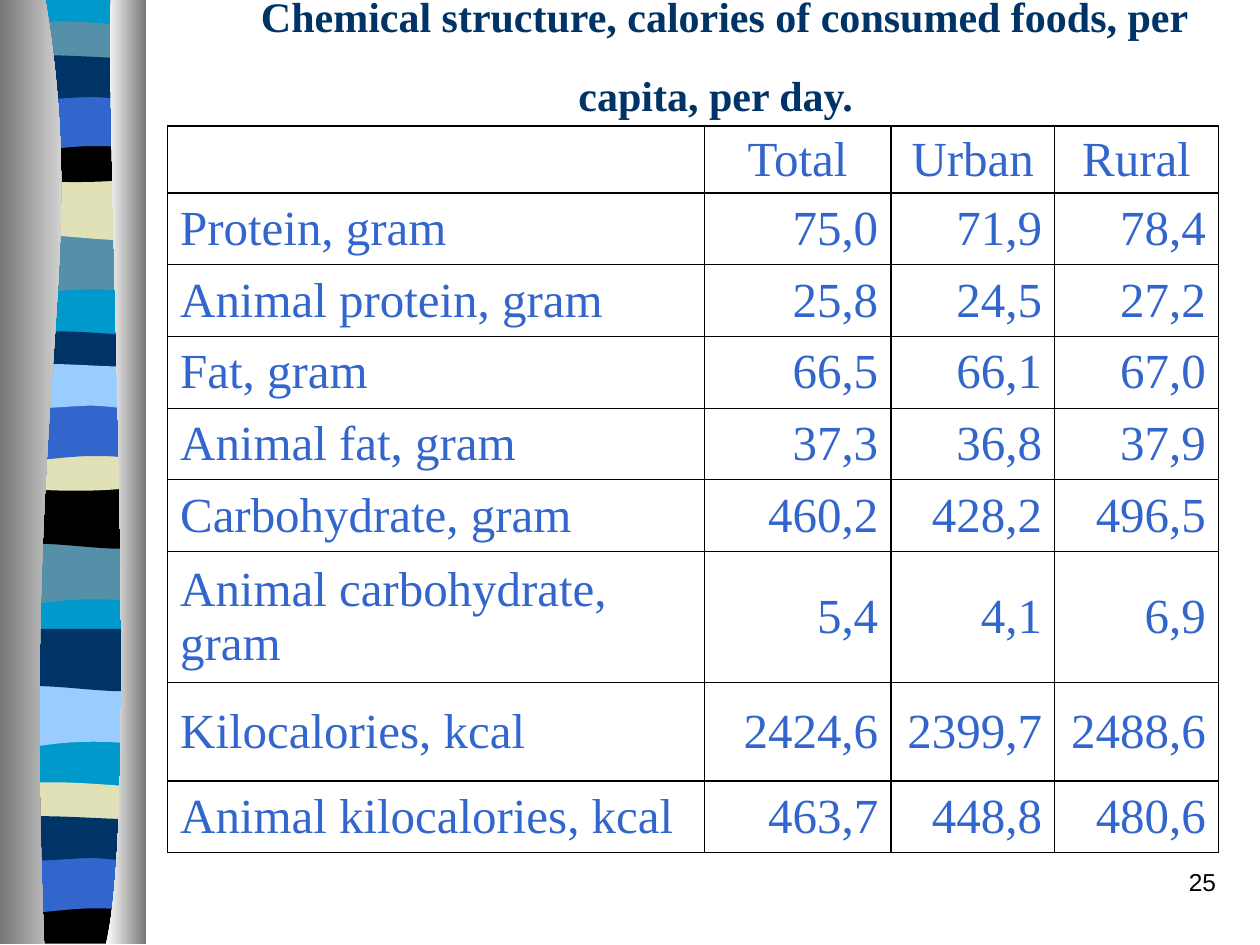
from dataclasses import dataclass

from lxml import etree
from pptx import Presentation
from pptx.dml.color import RGBColor as RGB
from pptx.enum.text import MSO_ANCHOR as Anchor, PP_ALIGN as Align
from pptx.oxml.ns import qn
from pptx.util import Inches, Pt


@dataclass(frozen=True)
class Theme:
    serif: str = "Times New Roman"
    sans: str = "Arial"
    title_size: int = 24
    title_gap_size: int = 40
    table_size: int = 28
    number_size: int = 14
    cyan: str = "0099CC"
    teal: str = "5490A8"
    sand: str = "E1E1B7"
    black: str = "000000"
    blue: str = "3366CC"
    navy: str = "003366"
    sky: str = "99CCFF"
    white: str = "FFFFFF"
    grey: str = "767676"


LEFT, RIGHT = 0.05, 1.14


def band(height, top=(), bottom=()):
    """Steps of a band outline: one point is a line, three points are a curve."""
    bottom = bottom or [[(LEFT, height)]]
    return [[(RIGHT, 0)], [(RIGHT, height)], *bottom, [(LEFT, 0)], *(top or [[(RIGHT, 0)]])]


def write_text(frame, text, size, color, font, bold=False, align=Align.LEFT):
    paragraph = frame.paragraphs[0]
    paragraph.alignment = align
    run = paragraph.add_run()
    run.text = text
    run.font.size, run.font.name, run.font.bold = Pt(size), font, bold
    run.font.color.rgb = RGB.from_string(color)


class SlideBuilder:
    def __init__(self, slide, theme):
        self.slide = slide
        self.theme = theme

    def outline(self, steps, color=None, gradient=None, top=0):
        points = [(Inches(x), Inches(y + top)) for step in steps for x, y in step]
        builder = self.slide.shapes.build_freeform(*points[0])
        builder.add_line_segments(points[1:], close=True)
        shape = builder.convert_to_shape()
        self.bend(shape, steps[1:])
        shape.shadow.inherit = False
        shape.line.fill.background()
        if gradient:
            shape.fill.gradient()
            shape.fill.gradient_angle = 0
            for stop, stop_color in zip(shape.fill.gradient_stops, gradient):
                stop.color.rgb = RGB.from_string(stop_color)
        else:
            shape.fill.solid()
            shape.fill.fore_color.rgb = RGB.from_string(color)

    def bend(self, shape, steps):
        """Join the three points of each curve step into one Bezier segment."""
        lines = iter(list(shape.element.iter(qn("a:lnTo"))))
        for step in steps:
            segment = next(lines)
            if len(step) == 3:
                segment.tag = qn("a:cubicBezTo")
                for line in (next(lines), next(lines)):
                    segment.append(line[0])
                    line.getparent().remove(line)

    def text_box(self, left, top, width, height, anchor=Anchor.TOP):
        box = self.slide.shapes.add_textbox(*map(Inches, (left, top, width, height)))
        box.text_frame.word_wrap = True
        box.text_frame.vertical_anchor = anchor
        return box.text_frame

    def border(self, cell, widths):
        properties = cell._tc.get_or_add_tcPr()
        for index, (side, width) in enumerate(widths.items()):
            line = etree.Element(qn(f"a:ln{side}"), w=str(Pt(width)))
            fill = etree.SubElement(line, qn("a:solidFill"))
            etree.SubElement(fill, qn("a:srgbClr"), val=self.theme.black)
            properties.insert(index, line)

    def table(self, left, top, columns, heights, rows):
        frame = self.slide.shapes.add_table(
            len(rows), len(columns), Inches(left), Inches(top),
            Inches(sum(columns)), Inches(sum(heights)))
        table = frame.table
        table.first_row = table.horz_banding = False
        for column, width in zip(table.columns, columns):
            column.width = Inches(width)
        for row, height in zip(table.rows, heights):
            row.height = Inches(height)
        for r, values in enumerate(rows):
            for c, value in enumerate(values):
                cell = table.cell(r, c)
                cell.fill.background()
                cell.vertical_anchor = Anchor.MIDDLE
                if r == 0:
                    cell.margin_top = cell.margin_bottom = Inches(0.02)
                self.border(cell, {"L": 1, "R": 1, "T": 1 if r < 2 else 0.75,
                                   "B": 1 if r in (0, len(rows) - 1) else 0.75})
                if value:
                    align = Align.CENTER if r == 0 else Align.RIGHT if c else Align.LEFT
                    write_text(cell.text_frame, value, size=self.theme.table_size,
                               color=self.theme.blue, font=self.theme.serif, align=align)


def draw_ribbon(builder):
    theme = builder.theme
    # Band outlines, measured from the top right corner of each band
    sag = band(0.47, bottom=[[(0.39, 0.39), (0.24, 0.55), (LEFT, 0.47)]])
    ripple = band(0.47, bottom=[[(0.96, 0.55), (0.39, 0.41), (LEFT, 0.47)]])
    crest = band(0.24, top=[[(0.12, -0.05), (0.29, -0.04), (0.47, -0.04)],
                            [(0.65, -0.04), (1, -0.01), (RIGHT, 0)]],
                 bottom=[[(0.96, 0.29), (0.24, 0.29), (LEFT, 0.24)]])
    bowl_top = [[(0.72, 0.05), (0.91, 0), (RIGHT, 0)]]
    bowl = band(0.32, top=bowl_top, bottom=[[(0.96, 0.38), (0.24, 0.38), (LEFT, 0.32)]])
    foot = band(0.37, top=bowl_top)
    arch = band(0.47, bottom=[[(0.97, 0.42), (0.9, 0.42), (0.72, 0.42)],
                              [(0.54, 0.42), (0.22, 0.47), (LEFT, 0.47)]])
    swell = band(0.31, top=[[(0.21, -0.05), (0.79, 0), (0.97, 0)],
                            [(1.15, 0), (1.1, 0), (RIGHT, 0)]],
                 bottom=[[(1.07, 0.36), (0.9, 0.31), (0.72, 0.31)],
                         [(0.54, 0.31), (0.17, 0.36), (LEFT, 0.31)]])

    # Bands from back to front
    bands = [
        (band(7.47), 0, theme.cyan),
        (sag, 1.85, theme.teal), (ripple, 1.41, theme.sand), (crest, 0.21, theme.teal),
        (bowl, 1.08, theme.black), (arch, 0.74, theme.blue), (swell, 0.46, theme.navy),
        (sag, 4.31, theme.teal), (ripple, 3.86, theme.black), (crest, 2.67, theme.navy),
        (bowl, 3.53, theme.sand), (arch, 3.2, theme.blue), (swell, 2.91, theme.sky),
        (sag, 5.44, theme.sky), (ripple, 4.99, theme.navy), (crest, 6.25, theme.sand),
        (foot, 7.12, theme.black), (arch, 6.79, theme.blue), (swell, 6.5, theme.navy),
    ]
    for steps, top, color in bands:
        builder.outline(steps, color, top=top)

    # Shaded columns on both sides
    builder.outline([[(0.36, 0)], [(0.72, 2.16), (0.17, 2.96), (0.35, 7.49)],
                     [(0, 7.49)], [(0, 0)], [(0.36, 0)]],
                    gradient=(theme.grey, theme.white))
    builder.outline([[(0.88, 0)], [(0.84, 1.25), (1.11, 6.46), (0.84, 7.49)],
                     [(1.16, 7.49)], [(1.16, 0)], [(0.88, 0)]],
                    gradient=(theme.white, theme.grey))


def main():
    presentation = Presentation()
    presentation.slide_width, presentation.slide_height = Inches(10), Inches(7.5)
    slide = presentation.slides.add_slide(presentation.slide_layouts[6])
    theme = Theme()
    builder = SlideBuilder(slide, theme)
    draw_ribbon(builder)

    # Page number
    number = builder.text_box(7.67, 6.83, 2.08, 0.5)
    write_text(number, "25", size=theme.number_size, color=theme.black,
               font=theme.sans, align=Align.RIGHT)

    # Title, with a large closing space that opens up its last line
    title = builder.text_box(1.5, 0, 8.5, 0.92, Anchor.MIDDLE)
    write_text(title, "Chemical structure, calories of consumed foods, per capita, per day.",
               size=theme.title_size, color=theme.navy, font=theme.serif,
               bold=True, align=Align.CENTER)
    write_text(title, " ", size=theme.title_gap_size, color=theme.navy,
               font=theme.serif, align=Align.CENTER)

    # Nutrition table
    builder.table(1.33, 1, [4.26, 1.48, 1.3, 1.3], [0.53] + [0.57] * 5 + [1.04, 0.78, 0.57], [
        ("", "Total", "Urban", "Rural"),
        ("Protein, gram", "75,0", "71,9", "78,4"),
        ("Animal protein, gram", "25,8", "24,5", "27,2"),
        ("Fat, gram", "66,5", "66,1", "67,0"),
        ("Animal fat, gram", "37,3", "36,8", "37,9"),
        ("Carbohydrate, gram", "460,2", "428,2", "496,5"),
        ("Animal carbohydrate, gram", "5,4", "4,1", "6,9"),
        ("Kilocalories, kcal", "2424,6", "2399,7", "2488,6"),
        ("Animal kilocalories, kcal", "463,7", "448,8", "480,6"),
    ])
    presentation.save("out.pptx")


if __name__ == "__main__":
    main()
